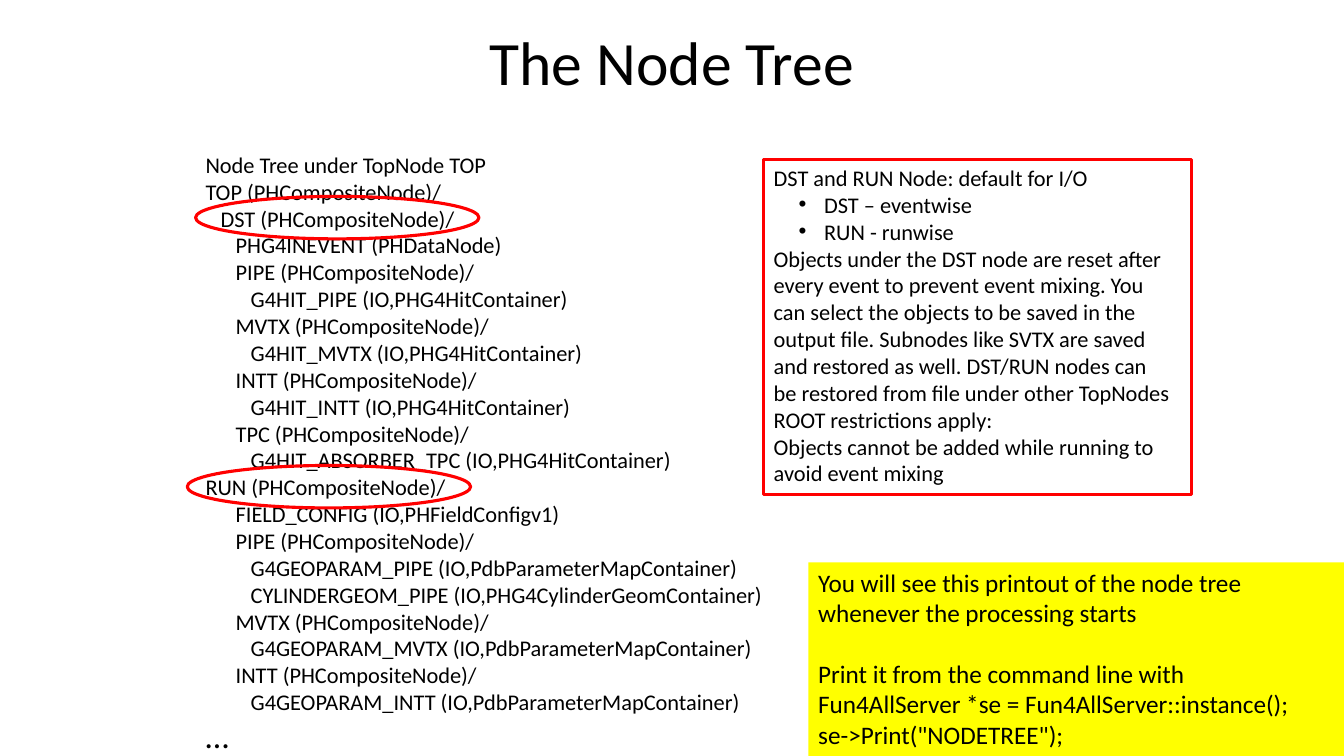
"""Build the slide that explains the node tree printout."""
from dataclasses import dataclass

from lxml.etree import SubElement
from pptx import Presentation
from pptx.dml.color import RGBColor
from pptx.enum.shapes import MSO_SHAPE
from pptx.enum.text import MSO_ANCHOR, PP_ALIGN
from pptx.oxml.ns import qn
from pptx.util import Cm, Pt

TITLE = "The Node Tree"
TREE = [
    (0, "Node Tree under TopNode TOP"),
    (0, "TOP (PHCompositeNode)/"),
    (1, "DST (PHCompositeNode)/"),
    (2, "PHG4INEVENT (PHDataNode)"),
    (2, "PIPE (PHCompositeNode)/"),
    (3, "G4HIT_PIPE (IO,PHG4HitContainer)"),
    (2, "MVTX (PHCompositeNode)/"),
    (3, "G4HIT_MVTX (IO,PHG4HitContainer)"),
    (2, "INTT (PHCompositeNode)/"),
    (3, "G4HIT_INTT (IO,PHG4HitContainer)"),
    (2, "TPC (PHCompositeNode)/"),
    (3, "G4HIT_ABSORBER_TPC (IO,PHG4HitContainer)"),
    (0, "RUN (PHCompositeNode)/"),
    (2, "FIELD_CONFIG (IO,PHFieldConfigv1)"),
    (2, "PIPE (PHCompositeNode)/"),
    (3, "G4GEOPARAM_PIPE (IO,PdbParameterMapContainer)"),
    (3, "CYLINDERGEOM_PIPE (IO,PHG4CylinderGeomContainer)"),
    (2, "MVTX (PHCompositeNode)/"),
    (3, "G4GEOPARAM_MVTX (IO,PdbParameterMapContainer)"),
    (2, "INTT (PHCompositeNode)/"),
    (3, "G4GEOPARAM_INTT (IO,PdbParameterMapContainer)"),
    (0, "…"),
]
IO_RULES = [
    "DST and RUN Node: default for I/O",
    "DST – eventwise",
    "RUN - runwise",
    "Objects under the DST node are reset after",
    "every event to prevent event mixing. You",
    "can select the objects to be saved in the",
    "output file. Subnodes like SVTX are saved",
    "and restored as well. DST/RUN nodes can",
    "be restored from file under other TopNodes",
    "ROOT restrictions apply:",
    "Objects cannot be added while running to",
    "avoid event mixing",
]
IO_BULLETS = (1, 2)
PRINTOUT = [
    "You will see this printout of the node tree whenever the processing starts",
    "Print it from the command line with",
    "Fun4AllServer *se = Fun4AllServer::instance();",
    'se->Print("NODETREE");',
]
COMMAND_START = 1
NODE_RINGS = [(4.93, 4.95), (4.72, 11.73)]
RING_SIZE = (7.14, 1.07)
TREE_STEP = 0.38


@dataclass(frozen=True)
class Theme:
    """Colours, font and type sizes of the slide."""
    font: str = "Calibri"
    ink: RGBColor = RGBColor(0, 0, 0)
    paper: RGBColor = RGBColor(255, 255, 255)
    accent: RGBColor = RGBColor(255, 0, 0)
    highlight: RGBColor = RGBColor(255, 255, 0)
    title: Pt = Pt(44)
    body: Pt = Pt(16)
    ellipsis: Pt = Pt(24)
    printout: Pt = Pt(18)
    outline: Pt = Pt(2.25)
    command_gap: Pt = Pt(22)


THEME = Theme()


def write(shape, lines, size, align=PP_ALIGN.LEFT, anchor=MSO_ANCHOR.TOP):
    """Fill a shape with paragraphs and return them."""
    frame = shape.text_frame
    frame.word_wrap = True
    frame.vertical_anchor = anchor
    frame.text = "\n".join(lines)
    for paragraph in frame.paragraphs:
        paragraph.alignment = align
        for run in paragraph.runs:
            run.font.name = THEME.font
            run.font.size = size
            run.font.color.rgb = THEME.ink
    return frame.paragraphs


def add_panel(slide, preset, box, fill=None, line=None):
    """Add a flat preset shape with an optional fill and outline."""
    panel = slide.shapes.add_shape(preset, *map(Cm, box))
    panel.shadow.inherit = False
    if fill is None:
        panel.fill.background()
    else:
        panel.fill.solid()
        panel.fill.fore_color.rgb = fill
    if line is None:
        panel.line.fill.background()
    else:
        panel.line.color.rgb = line
        panel.line.width = THEME.outline
    return panel


def indent(paragraph, margin, hanging=0, bullet=None):
    """Set the left margin of a paragraph and an optional bullet."""
    properties = paragraph._p.get_or_add_pPr()
    properties.set("marL", str(Cm(margin)))
    properties.set("indent", str(-Cm(hanging)))
    if bullet:
        SubElement(properties, qn("a:buFont")).set("typeface", "Arial")
        SubElement(properties, qn("a:buChar")).set("char", bullet)


def main():
    """Lay out the slide and save it."""
    deck = Presentation()
    deck.slide_width, deck.slide_height = Cm(33.87), Cm(19.05)
    slide = deck.slides.add_slide(deck.slide_layouts[6])

    title = slide.shapes.add_textbox(Cm(2.33), Cm(-0.2), Cm(29.21), Cm(3.68))
    heading = write(title, [TITLE], THEME.title, PP_ALIGN.CENTER, MSO_ANCHOR.MIDDLE)
    heading[0].line_spacing = 0.9

    tree = slide.shapes.add_textbox(Cm(4.93), Cm(3.68), Cm(14.73), Cm(15.65))
    nodes = write(tree, [name for _, name in TREE], THEME.body)
    for node, (depth, _) in zip(nodes, TREE):
        indent(node, depth * TREE_STEP)
    nodes[-1].runs[0].font.size = THEME.ellipsis

    for corner in NODE_RINGS:
        add_panel(slide, MSO_SHAPE.OVAL, corner + RING_SIZE, line=THEME.accent)

    io_rules = add_panel(slide, MSO_SHAPE.RECTANGLE, (19.25, 4.01, 10.77, 8.46),
                         THEME.paper, THEME.accent)
    rules = write(io_rules, IO_RULES, THEME.body)
    for index in IO_BULLETS:
        indent(rules[index], 1.27, 0.64, "•")

    printout = add_panel(slide, MSO_SHAPE.RECTANGLE, (20.37, 14.17, 13.5, 4.88),
                         THEME.highlight)
    steps = write(printout, PRINTOUT, THEME.printout)
    steps[COMMAND_START].space_before = THEME.command_gap

    deck.save("out.pptx")


if __name__ == "__main__":
    main()
